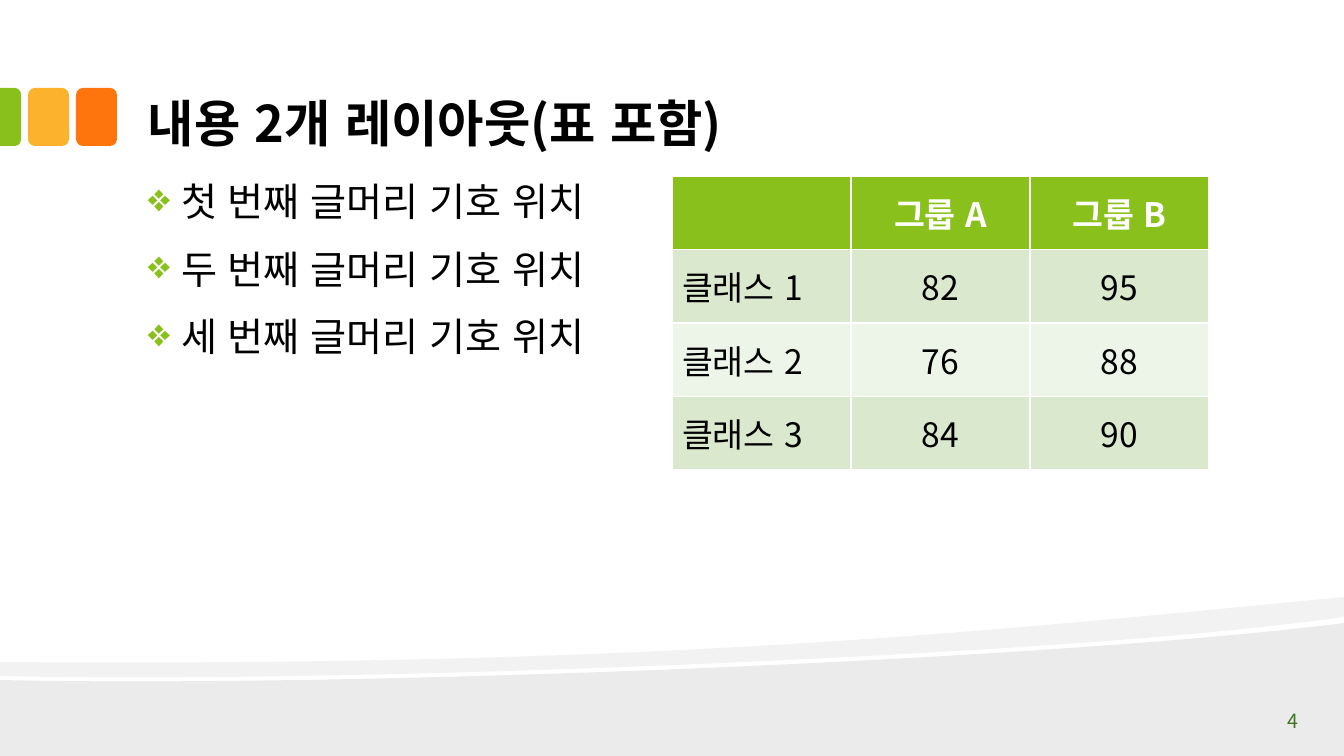
from lxml import etree
from pptx import Presentation
from pptx.dml.color import RGBColor
from pptx.enum.shapes import MSO_SHAPE
from pptx.enum.text import MSO_ANCHOR, PP_ALIGN
from pptx.oxml.ns import qn
from pptx.util import Emu, Pt

SLIDE_WIDTH, SLIDE_HEIGHT = 1344, 756
EMU_PER_PX = 12192000 / SLIDE_WIDTH
FONT, BULLET_FONT = "Noto Sans CJK KR", "OpenSymbol"
GREEN, YELLOW, ORANGE = "89C01C", "FCB22C", "FE750E"
BLACK, WHITE, DARK_GREEN = "000000", "FFFFFF", "3E7520"
ROW_TINTS = ["DAE8CD", "EDF4E8"]
ROUNDED = MSO_SHAPE.ROUNDED_RECTANGLE
ROUNDED_TOP = MSO_SHAPE.ROUND_2_SAME_RECTANGLE
TOP, MIDDLE, BOTTOM = MSO_ANCHOR.TOP, MSO_ANCHOR.MIDDLE, MSO_ANCHOR.BOTTOM
LEFT, CENTER, RIGHT = PP_ALIGN.LEFT, PP_ALIGN.CENTER, PP_ALIGN.RIGHT

BULLETS = ["첫 번째 글머리 기호 위치", "두 번째 글머리 기호 위치", "세 번째 글머리 기호 위치"]
SCORES = [
    ["", "그룹 A", "그룹 B"],
    ["클래스 1", "82", "95"],
    ["클래스 2", "76", "88"],
    ["클래스 3", "84", "90"],
]


def px(length):
    return Emu(round(length * EMU_PER_PX))


def color(value):
    return RGBColor.from_string(value)


def paint(shape, fill, opacity=100):
    shape.shadow.inherit = False
    shape.line.fill.background()
    shape.fill.solid()
    shape.fill.fore_color.rgb = color(fill)
    if opacity < 100:
        tint = shape.fill._xPr.find(".//" + qn("a:srgbClr"))
        etree.SubElement(tint, qn("a:alpha"), val=str(opacity * 1000))


def add_run(paragraph, text, size, text_color, bold=False):
    run = paragraph.add_run()
    run.text = text
    run.font.size = Pt(size)
    run.font.name = FONT
    run.font.bold = bold
    run.font.color.rgb = color(text_color)
    properties = run._r.get_or_add_rPr()
    properties.set("lang", "ko-KR")
    properties.set("kern", "1200")
    etree.SubElement(properties, qn("a:ea"), typeface=FONT)


def add_text_frame(slide, box, anchor):
    frame = slide.shapes.add_textbox(*map(px, box)).text_frame
    frame.word_wrap = True
    frame.vertical_anchor = anchor
    frame.margin_left = frame.margin_right = px(13)
    frame.margin_top = frame.margin_bottom = px(7)
    return frame


def add_wave(slide, box, start, segments, opacity):
    left, top = box[:2]
    anchors = [(px(left + x), px(top + y)) for x, y in [start] + [s[-1] for s in segments]]
    builder = slide.shapes.build_freeform(*anchors[0])
    builder.add_line_segments(anchors[1:], close=True)
    wave = builder.convert_to_shape()
    paint(wave, BLACK, opacity)
    for line, points in zip(list(wave._element.iter(qn("a:lnTo"))), segments):
        if len(points) == 3:
            bend = etree.Element(qn("a:cubicBezTo"))
            for x, y in points:
                etree.SubElement(bend, qn("a:pt"), x=str(px(left + x) - wave.left),
                                 y=str(px(top + y) - wave.top))
            line.getparent().replace(line, bend)


def add_footer_waves(slide, box):
    width, height = box[2:]
    add_wave(slide, box, (0, 83), [
        [(355, 91), (1050, 63), (width, 26)],
        [(width, height)],
        [(0, height)],
    ], 8)
    add_wave(slide, box, (0, 65), [
        [(657, 70), (979, 35), (width, 0)],
        [(width, 20)],
        [(1265, 31), (1157, 41), (1037, 49)],
        [(704, 71), (260, 85), (0, 79)],
    ], 5)


def add_title_tabs(slide, box):
    left, top, width, height = box
    tab_width, pitch = 41, 48
    for index, fill in enumerate([ORANGE, YELLOW]):
        tab_left = left + width - tab_width - index * pitch
        tab = slide.shapes.add_shape(ROUNDED, px(tab_left), px(top), px(tab_width), px(height))
        paint(tab, fill)
    edge_width = 21
    offset = (height - edge_width) / 2
    edge = slide.shapes.add_shape(ROUNDED_TOP, px(left - offset), px(top + offset),
                                  px(height), px(edge_width))
    edge.rotation = 90
    edge.adjustments[0] = 0.29
    paint(edge, GREEN)


def add_title(slide, box):
    frame = add_text_frame(slide, box, BOTTOM)
    add_run(frame.paragraphs[0], "내용 2개 레이아웃(표 포함)", 36, BLACK, True)


def add_bullets(slide, box):
    frame = add_text_frame(slide, box, TOP)
    for index, text in enumerate(BULLETS):
        paragraph = frame.add_paragraph() if index else frame.paragraphs[0]
        paragraph.line_spacing = 0.9
        paragraph.space_before = Pt(18)
        properties = paragraph._p.get_or_add_pPr()
        properties.set("marL", str(px(33)))
        properties.set("indent", str(-px(33)))
        bullet_color = etree.SubElement(properties, qn("a:buClr"))
        etree.SubElement(bullet_color, qn("a:srgbClr"), val=GREEN)
        etree.SubElement(properties, qn("a:buFont"), typeface=BULLET_FONT)
        etree.SubElement(properties, qn("a:buChar"), char="❖")
        add_run(paragraph, text, 28, BLACK)


def add_score_table(slide, box):
    rows, columns = len(SCORES), len(SCORES[0])
    table = slide.shapes.add_table(rows, columns, *map(px, box)).table
    for row, values in enumerate(SCORES):
        header = row == 0
        for column, text in enumerate(values):
            cell = table.cell(row, column)
            cell.vertical_anchor = MIDDLE
            cell.fill.solid()
            cell.fill.fore_color.rgb = color(GREEN if header else ROW_TINTS[(row - 1) % 2])
            paragraph = cell.text_frame.paragraphs[0]
            paragraph.alignment = CENTER if column else LEFT
            if text:
                add_run(paragraph, text, 24, WHITE if header else BLACK, header)


def add_page_number(slide, box):
    paragraph = add_text_frame(slide, box, MIDDLE).paragraphs[0]
    paragraph.alignment = RIGHT
    add_run(paragraph, "4", 14, DARK_GREEN)


def main():
    presentation = Presentation()
    presentation.slide_width = px(SLIDE_WIDTH)
    presentation.slide_height = px(SLIDE_HEIGHT)
    slide = presentation.slides.add_slide(presentation.slide_layouts[6])
    add_footer_waves(slide, (0, 597, SLIDE_WIDTH, 159))
    add_title_tabs(slide, (0, 88, 117, 58))
    add_title(slide, (135, 17, 1075, 143))
    add_score_table(slide, (672, 176, 537, 294))
    add_bullets(slide, (135, 176, 537, 504))
    add_page_number(slide, (1221, 711, 90, 20))
    presentation.save("out.pptx")


if __name__ == "__main__":
    main()
